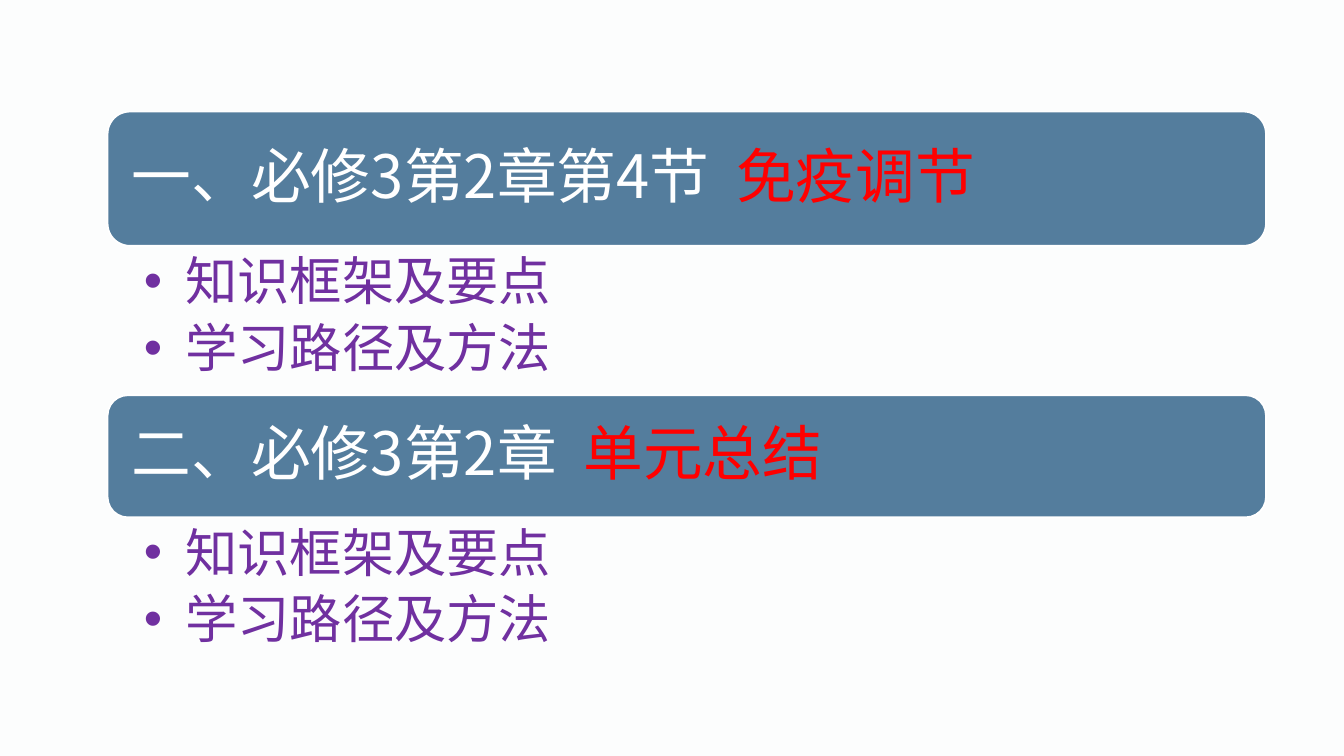
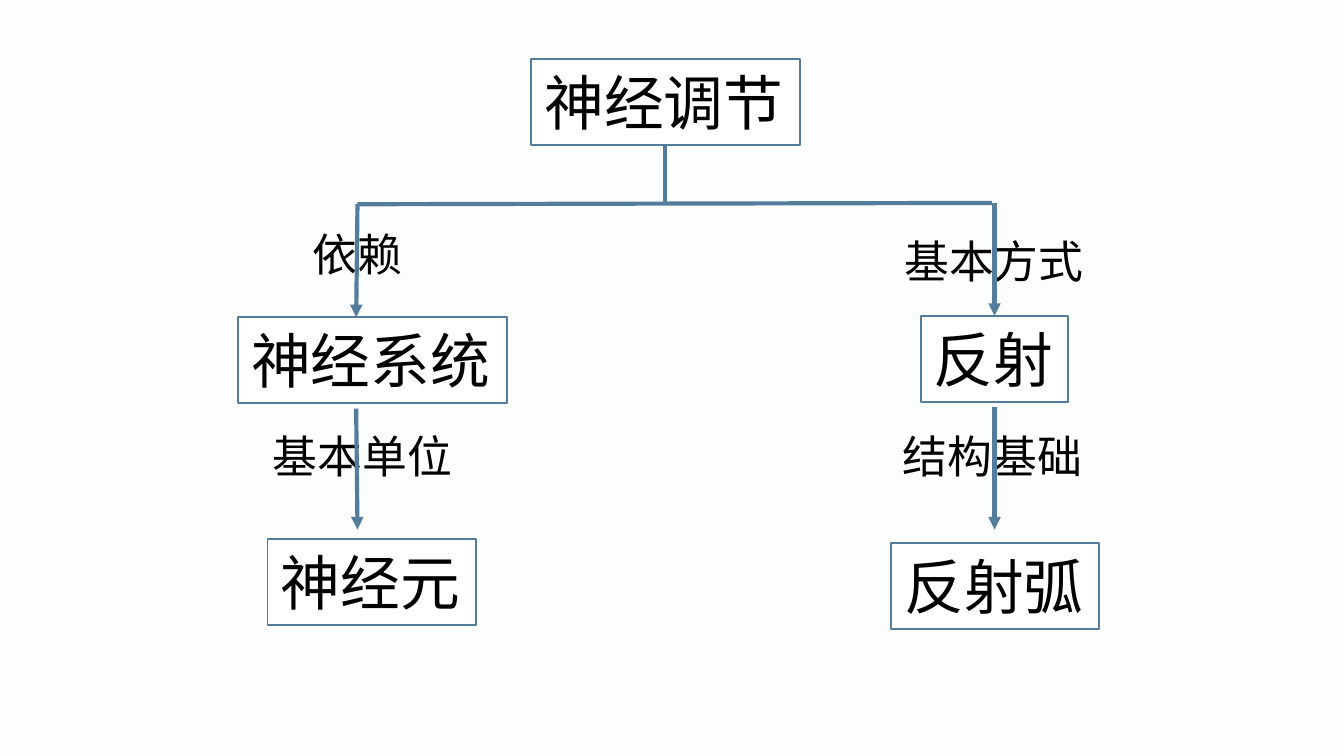
"""Build two slides: a unit outline and a concept map of neural regulation."""
from typing import NamedTuple

from lxml import etree
from pptx import Presentation
from pptx import util as u
from pptx.dml.color import RGBColor
from pptx.enum import lang, shapes, text
from pptx.oxml.ns import qn

BLUE, WHITE, BLACK = "547D9D", "FFFFFF", "000000"
RED, VIOLET, PAPER = "FF0000", "7030A0", "FCFDFD"
SANS, ARIAL = "Noto Sans CJK SC", "Arial"
POINTS = ("知识框架及要点", "学习路径及方法")


class Part(NamedTuple):
    """A band with its heading, and the list below it."""
    lead: str
    topic: str
    top: float
    high: float


class Node(NamedTuple):
    """A text at a place on the map."""
    words: str
    left: float
    top: float
    wide: float


class Link(NamedTuple):
    """A line between two points, with or without an arrowhead."""
    x1: float
    y1: float
    x2: float
    y2: float
    arrow: bool = True


PARTS = (Part("一、必修3第2章第4节", "免疫调节", 0.83, 1.0),
         Part("二、必修3第2章", "单元总结", 2.94, 0.91))
ROOT = Node("神经调节", 3.95, 0.44, 2.0)
REFLEX = Node("反射", 6.85, 2.35, 1.1)
BOXES = (Node("神经系统", 1.77, 2.36, 2.0), REFLEX,
         Node("反射弧", 6.63, 4.04, 1.55), Node("神经元", 1.99, 4.01, 1.55))
LABELS = (Node("依赖", 2.23, 1.64, 0.88), Node("基本单位", 1.93, 3.14, 1.55),
          Node("基本方式", 6.63, 1.69, 1.55), Node("结构基础", 6.62, 3.14, 1.55))
LINKS = (Link(2.65, 3.04, 2.66, 3.94), Link(7.4, 3.03, 7.4, 3.94),
         Link(2.66, 1.52, 2.65, 2.36), Link(2.66, 1.52, 7.38, 1.51, False))
DROP = Link(7.4, 1.51, 7.4, 2.35)
STEM = Link(4.95, 1.08, 4.95, 1.52, False)


def tint(code: str) -> RGBColor:
    """Turn a hex string into a colour."""
    return RGBColor.from_string(code)


def place(shape, left: float, top: float, wide: float, high: float) -> None:
    """Move and size a shape, in inches."""
    shape.left, shape.top = u.Inches(left), u.Inches(top)
    shape.width, shape.height = u.Inches(wide), u.Inches(high)


def paint(shape, fill: str, line: str) -> None:
    """Give a shape its fill and a thin outline."""
    shape.fill.solid()
    shape.fill.fore_color.rgb = tint(fill)
    shape.line.color.rgb = tint(line)
    shape.line.width = u.Pt(1)


def style(run, size: float, color: str, face: str = SANS) -> None:
    """Format a run of Chinese text."""
    font = run.font
    font.size, font.bold, font.name = u.Pt(size), False, face
    font.color.rgb = tint(color)
    font.language_id = lang.MSO_LANGUAGE_ID.SIMPLIFIED_CHINESE
    etree.SubElement(run._r.rPr, qn("a:ea"), typeface=SANS)


def frame(shape, anchor, pads: tuple[float, ...], wrap: bool = True):
    """Set the anchor, insets and wrapping of a shape's text."""
    tf = shape.text_frame
    tf.auto_size = (text.MSO_AUTO_SIZE.NONE if wrap or shape.is_placeholder
                    else text.MSO_AUTO_SIZE.SHAPE_TO_FIT_TEXT)
    tf.word_wrap, tf.vertical_anchor = wrap, anchor
    tf.margin_left, tf.margin_top, tf.margin_right, tf.margin_bottom = map(
        u.Inches, pads)
    return tf


def pace(para, after: float) -> None:
    """Set tight lines and the space after a paragraph."""
    para.line_spacing = 0.9
    para.space_before, para.space_after = u.Pt(0), u.Pt(after)


def head(shape, part: Part) -> None:
    """Write the two-colour heading of a part."""
    place(shape, 0.85, part.top + 0.05, 8.52, part.high - 0.1)
    tf = frame(shape, text.MSO_ANCHOR.MIDDLE, (0.13,) * 4)
    para = tf.paragraphs[0]
    pace(para, 11.2)
    for words, color in ((part.lead, WHITE), (" ", WHITE), (part.topic, RED)):
        run = para.add_run()
        run.text = words
        style(run, 32, color)
    para.runs[1]._r.rPr.set("spc", "700")


def items(shape, top: float) -> None:
    """Write the bulleted list of a part."""
    place(shape, 0.8, top, 8.62, 1.18)
    tf = frame(shape, text.MSO_ANCHOR.TOP, (0.27, 0.04, 0.22, 0.04))
    tf.text = "\n".join(POINTS)
    for para in tf.paragraphs:
        para.level = 1
        ppr = para._p.get_or_add_pPr()
        ppr.set("marL", str(u.Inches(0.31)))
        ppr.set("indent", str(-u.Inches(0.31)))
        etree.SubElement(ppr, qn("a:buChar"), char="•")
        pace(para, 5.6)
        style(para.runs[0], 28, VIOLET)


def write(shape, node: Node, size: float, high: float, face: str) -> None:
    """Place a map text and format it."""
    place(shape, node.left, node.top, node.wide, high)
    tf = frame(shape, text.MSO_ANCHOR.TOP, (0.1, 0.05) * 2, False)
    tf.text = node.words
    para = tf.paragraphs[0]
    para.alignment = text.PP_ALIGN.LEFT
    style(para.runs[0], size, BLACK, face)


def box(shape, node: Node) -> None:
    """Format a shape as an outlined map box."""
    paint(shape, WHITE, BLUE)
    write(shape, node, 32, 0.64, ARIAL)


def draw(slide, link: Link):
    """Draw a map line and return it."""
    line = slide.shapes.add_connector(
        shapes.MSO_CONNECTOR.STRAIGHT,
        *map(u.Inches, (link.x1, link.y1, link.x2, link.y2)))
    line.line.color.rgb = tint(BLUE)
    line.line.width = u.Pt(2.25)
    if link.arrow:
        etree.SubElement(line.line._get_or_add_ln(), qn("a:tailEnd"),
                         type="triangle")
    etree.SubElement(line._element.spPr, qn("a:effectLst"))
    return line


def preset(slide, kind):
    """Add a preset shape without a shadow."""
    shape = slide.shapes.add_shape(kind, 0, 0, 0, 0)
    shape.shadow.inherit = False
    return shape


def outline(prs) -> None:
    """Build the slide with the two units."""
    slide = prs.slides.add_slide(prs.slide_layouts[4])
    title, *slots = slide.placeholders
    title._element.getparent().remove(title._element)
    for part, name, body in zip(PARTS, slots[::2], slots[1::2]):
        band = preset(slide, shapes.MSO_SHAPE.ROUNDED_RECTANGLE)
        place(band, 0.8, part.top, 8.62, part.high)
        paint(band, BLUE, WHITE)
        name._element.addprevious(band._element)
        head(name, part)
        items(body, part.top + part.high + 0.03)


def chart(prs) -> None:
    """Build the concept map."""
    slide = prs.slides.add_slide(prs.slide_layouts[5])
    root = slide.shapes.title
    box(root, ROOT)
    made = {}
    for node in BOXES:
        made[node] = preset(slide, shapes.MSO_SHAPE.RECTANGLE)
        box(made[node], node)
    for node in LABELS:
        write(slide.shapes.add_textbox(0, 0, 0, 0), node, 24, 0.5, SANS)
    for link in LINKS:
        draw(slide, link)
    draw(slide, DROP).end_connect(made[REFLEX], 0)
    draw(slide, STEM).begin_connect(root, 2)


def main() -> None:
    """Build and save the deck."""
    prs = Presentation()
    prs.slide_width = u.Inches(10)
    prs.slide_height = prs.slide_width * 9 // 16
    back = prs.slide_master.background.fill
    back.solid()
    back.fore_color.rgb = tint(PAPER)
    outline(prs)
    chart(prs)
    prs.save("out.pptx")


if __name__ == "__main__":
    main()
